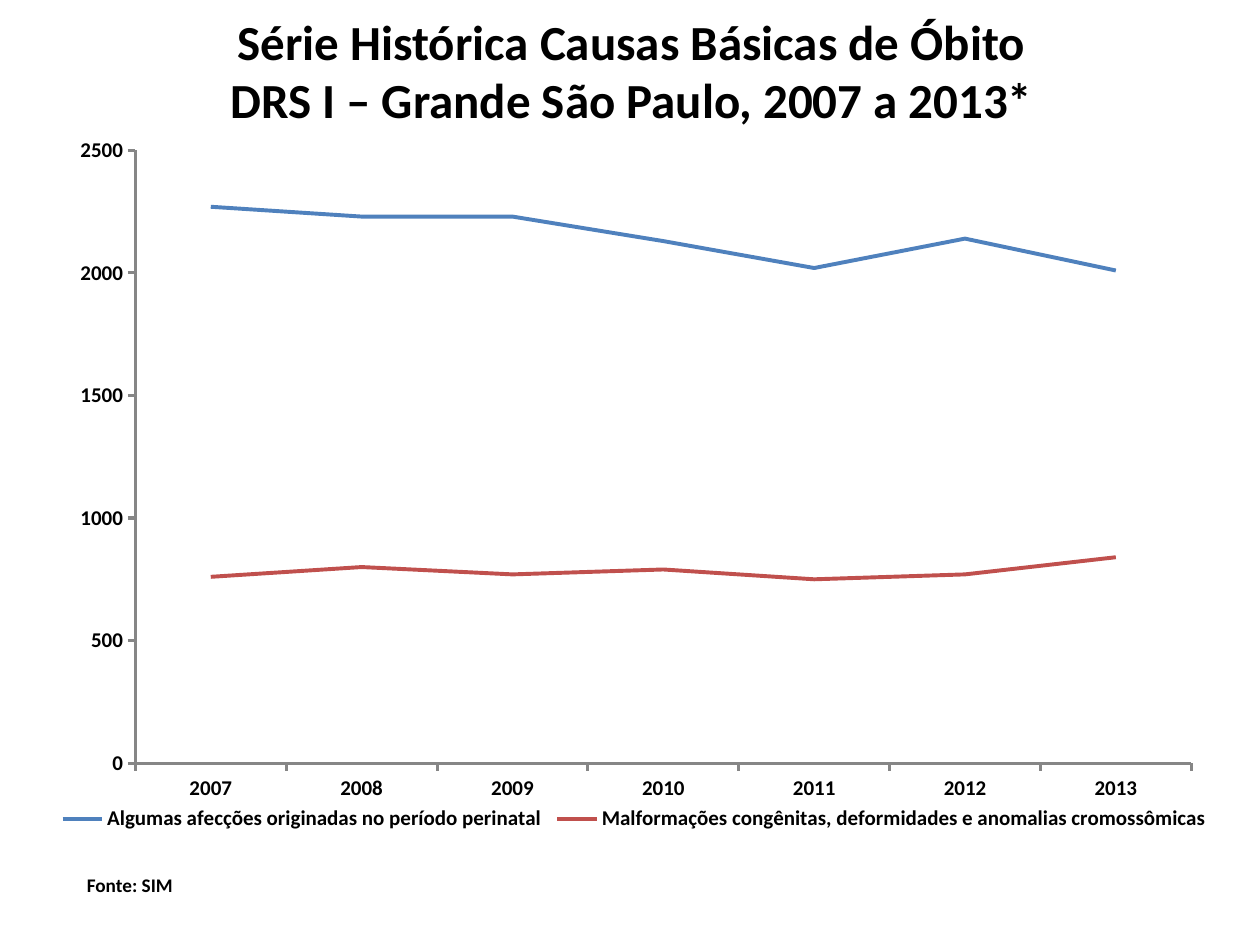
from dataclasses import dataclass

import lxml.etree
import pptx
import pptx.chart.data
import pptx.dml.color
import pptx.enum.chart
import pptx.enum.text
import pptx.oxml.ns
import pptx.util

Inches = pptx.util.Inches
Pt = pptx.util.Pt
qn = pptx.oxml.ns.qn


@dataclass(frozen=True)
class Theme:
    font: str = "Calibri"
    text: str = "000000"
    axis: str = "868686"
    series: tuple = ("4F81BD", "C0504D")
    title_size: float = 28
    chart_size: float = 12
    source_size: float = 11
    axis_width: float = 1.75
    series_width: float = 2.25


THEME = Theme()

YEARS = [str(year) for year in range(2007, 2014)]
DEATHS = {
    "Algumas afecções originadas no período perinatal":
        [2270, 2230, 2230, 2130, 2020, 2140, 2010],
    "Malformações congênitas, deformidades e anomalias cromossômicas":
        [760, 800, 770, 790, 750, 770, 840],
}


def rgb(color):
    return pptx.dml.color.RGBColor.from_string(color)


def style_font(font, size):
    font.name = THEME.font
    font.size = Pt(size)
    font.bold = True
    font.color.rgb = rgb(THEME.text)


def style_line(line, color, width):
    line.color.rgb = rgb(color)
    line.width = Pt(width)


def add_text(slide, box, text, size, wrap=True, **alignment):
    """Add a bold text box; alignment may hold horizontal and anchor."""
    shape = slide.shapes.add_textbox(*map(Inches, box))
    frame = shape.text_frame
    frame.text = text
    frame.word_wrap = wrap
    frame.vertical_anchor = alignment.get("anchor")
    for paragraph in frame.paragraphs:
        paragraph.alignment = alignment.get("horizontal")
        for run in paragraph.runs:
            style_font(run.font, size)
    return shape


def set_layout(element, position, inner=False):
    """Place a plot area or legend by fractions of the chart: x, y, w, h."""
    for old_layout in element.findall(qn("c:layout")):
        element.remove(old_layout)
    layout = lxml.etree.Element(qn("c:layout"))
    manual = lxml.etree.SubElement(layout, qn("c:manualLayout"))
    settings = [("layoutTarget", "inner")] if inner else []
    settings += [("xMode", "edge"), ("yMode", "edge")]
    settings += zip("xywh", position)
    for name, value in settings:
        lxml.etree.SubElement(manual, qn(f"c:{name}")).set("val", str(value))
    legend_position = element.find(qn("c:legendPos"))
    if legend_position is None:
        element.insert(0, layout)
    else:
        legend_position.addnext(layout)


def style_axis(axis):
    axis.has_major_gridlines = False
    axis.major_tick_mark = pptx.enum.chart.XL_TICK_MARK.OUTSIDE
    axis.minor_tick_mark = pptx.enum.chart.XL_TICK_MARK.NONE
    style_line(axis.format.line, THEME.axis, THEME.axis_width)
    style_font(axis.tick_labels.font, THEME.chart_size)


def add_line_chart(slide, box, categories, series_values):
    data = pptx.chart.data.CategoryChartData()
    data.categories = categories
    for name, values in series_values.items():
        data.add_series(name, values)
    chart = slide.shapes.add_chart(
        pptx.enum.chart.XL_CHART_TYPE.LINE, *map(Inches, box), data).chart
    chart.has_title = False
    style_font(chart.font, THEME.chart_size)

    style_axis(chart.category_axis)
    style_axis(chart.value_axis)
    chart.value_axis.minimum_scale = 0
    chart.value_axis.maximum_scale = 2500
    chart.value_axis.major_unit = 500

    plot = chart.plots[0]
    plot.vary_by_categories = False
    for series, color in zip(plot.series, THEME.series):
        series.smooth = False
        series.marker.style = pptx.enum.chart.XL_MARKER_STYLE.NONE
        style_line(series.format.line, color, THEME.series_width)

    chart.has_legend = True
    legend = chart.legend
    legend.position = pptx.enum.chart.XL_LEGEND_POSITION.BOTTOM
    legend.include_in_layout = False
    style_font(legend.font, THEME.chart_size)

    plot_area = chart.element.find(".//" + qn("c:plotArea"))
    set_layout(plot_area, (0.07, 0.04, 0.91, 0.83), inner=True)
    set_layout(chart.element.find(".//" + qn("c:legend")),
               (0, 0.92, 1, 0.05))


def main():
    presentation = pptx.Presentation()
    presentation.slide_width = Inches(10)
    presentation.slide_height = Inches(7.5)
    slide = presentation.slides.add_slide(presentation.slide_layouts[6])

    add_line_chart(slide, (0.43, 0.96, 9.21, 5.86), YEARS, DEATHS)
    add_text(slide, (0.51, 0.21, 9, 0.69),
             "Série Histórica Causas Básicas de Óbito\v"
             "DRS I – Grande São Paulo, 2007 a 2013*",
             THEME.title_size,
             horizontal=pptx.enum.text.PP_ALIGN.CENTER,
             anchor=pptx.enum.text.MSO_ANCHOR.MIDDLE)
    source = add_text(slide, (0.59, 6.88, 0.89, 0.29), "Fonte: SIM",
                      THEME.source_size, wrap=False)
    source.text_frame.auto_size = pptx.enum.text.MSO_AUTO_SIZE.SHAPE_TO_FIT_TEXT

    presentation.save("out.pptx")


if __name__ == "__main__":
    main()
